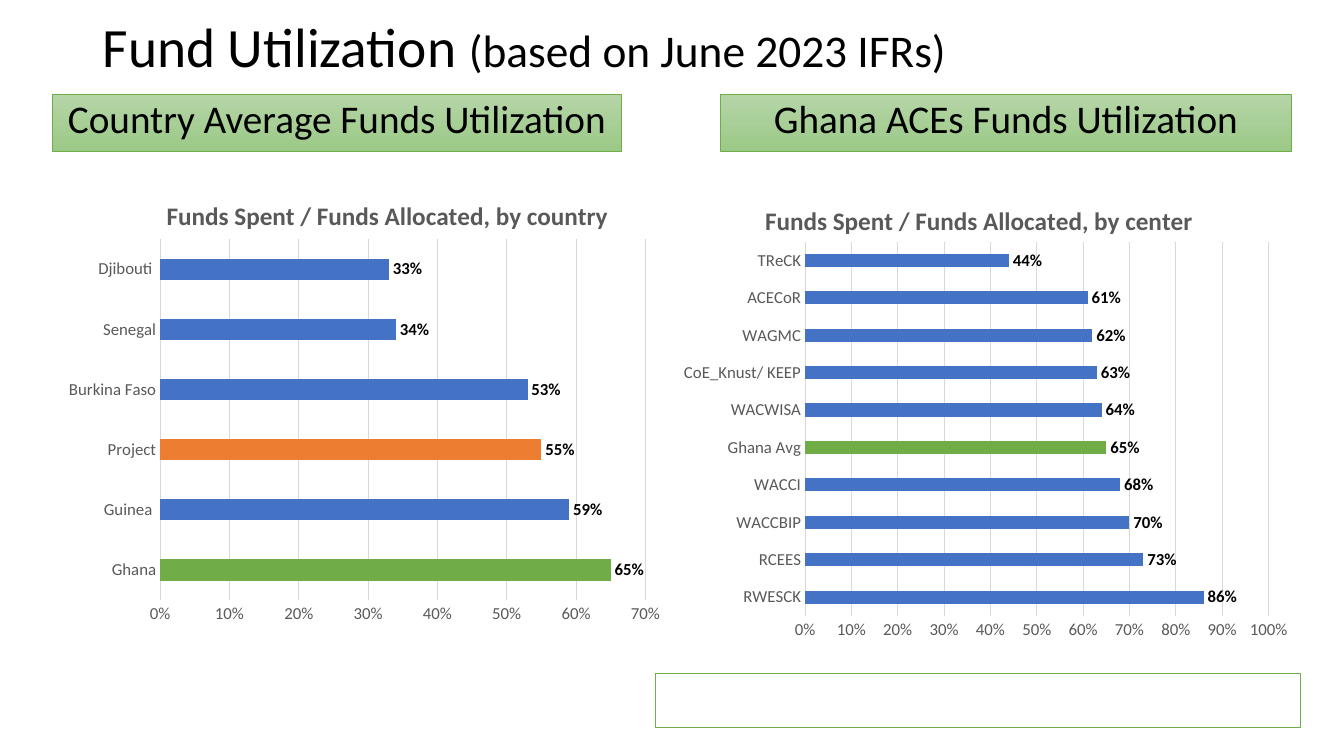
import pptx
import pptx.chart.data
import pptx.dml.color
import pptx.enum.chart
import pptx.enum.shapes
import pptx.enum.text
import pptx.oxml
import pptx.oxml.ns
import pptx.util

Inches = pptx.util.Inches
Pt = pptx.util.Pt
FONT = "Calibri"
COLORS = {
    "black": "000000", "white": "FFFFFF", "axis": "595959", "grid": "D9D9D9",
    "blue": "4472C4", "orange": "ED7D31", "green": "70AD47",
    "pale": "B5D5A7", "sage": "9CC987",
}
COUNTRIES = [("Ghana", 0.65), ("Guinea ", 0.59), ("Project", 0.55),
             ("Burkina Faso", 0.53), ("Senegal", 0.34), ("Djibouti ", 0.33)]
CENTERS = [("RWESCK", 0.86), ("RCEES", 0.73), ("WACCBIP", 0.7), ("WACCI", 0.68),
           ("Ghana Avg", 0.65), ("WACWISA", 0.64), ("CoE_Knust/ KEEP", 0.63),
           ("WAGMC", 0.62), ("ACECoR", 0.61), ("TReCK", 0.44)]


def color(name):
    """Return the named colour."""
    return pptx.dml.color.RGBColor.from_string(COLORS[name])


def style_font(font, size, name="black", bold=False):
    """Set typeface, size, colour and weight."""
    font.name, font.size, font.bold = FONT, Pt(size), bold
    font.color.rgb = color(name)


def add_title(page, box):
    """Place the slide title with its smaller qualifier."""
    frame = page.shapes.add_textbox(*map(Inches, box)).text_frame
    frame.word_wrap = True
    frame.vertical_anchor = pptx.enum.text.MSO_ANCHOR.MIDDLE
    para = frame.paragraphs[0]
    para.line_spacing = 0.9
    for text, size in (("Fund Utilization ", 39.6), ("(based on June 2023 IFRs)", 32.4)):
        span = para.add_run()
        span.text = text
        style_font(span.font, size)


def add_panel(page, box, line_width):
    """Place a white rectangle with a green outline."""
    panel = page.shapes.add_shape(pptx.enum.shapes.MSO_SHAPE.RECTANGLE, *map(Inches, box))
    panel.shadow.inherit = False
    panel.fill.solid()
    panel.fill.fore_color.rgb = color("white")
    panel.line.color.rgb = color("green")
    panel.line.width = Pt(line_width)
    return panel


def add_heading(page, box, text):
    """Place a section heading on a green gradient."""
    panel = add_panel(page, box, 0.5)
    panel.fill.gradient()
    panel.fill.gradient_angle = 270
    for stop, name in zip(panel.fill.gradient_stops, ("pale", "sage")):
        stop.color.rgb = color(name)
    frame = panel.text_frame
    frame.text = text
    frame.word_wrap = True
    frame.vertical_anchor = pptx.enum.text.MSO_ANCHOR.TOP
    para = frame.paragraphs[0]
    para.alignment = pptx.enum.text.PP_ALIGN.CENTER
    para.line_spacing = 0.9
    para.space_before = Pt(10)
    style_font(para.runs[0].font, 28)


def set_layout(parent, position, fractions, inner=False):
    """Fix a chart part at fractions of the chart box."""
    for old in parent.xpath("./c:layout"):
        parent.remove(old)
    target = '<c:layoutTarget val="inner"/>' if inner else ""
    modes = "".join(f'<c:{axis}Mode val="edge"/>' for axis in "xy")
    values = "".join(f'<c:{key} val="{value}"/>' for key, value in zip("xywh", fractions))
    parent.insert(position, pptx.oxml.parse_xml(
        f'<c:layout {pptx.oxml.ns.nsdecls("c")}><c:manualLayout>'
        f"{target}{modes}{values}</c:manualLayout></c:layout>"))


def style_axis(axis):
    """Remove tick marks and set grey labels."""
    axis.major_tick_mark = axis.minor_tick_mark = pptx.enum.chart.XL_TICK_MARK.NONE
    style_font(axis.tick_labels.font, 12, "axis")


def add_bars(page, box, title, rows, maximum, highlights, title_at, plot_at):
    """Place a bar chart of utilization rates with highlighted rows."""
    data = pptx.chart.data.CategoryChartData(number_format="0%")
    data.categories = [label for label, _ in rows]
    data.add_series("Series 1", [rate for _, rate in rows])
    chart = page.shapes.add_chart(
        pptx.enum.chart.XL_CHART_TYPE.BAR_CLUSTERED, *map(Inches, box), data).chart
    style_font(chart.font, 10)
    chart.has_legend = False
    chart.has_title = True
    chart.chart_title.text_frame.text = title
    style_font(chart.chart_title.text_frame.paragraphs[0].runs[0].font, 18, "axis", True)
    chart.chart_title.include_in_layout = False
    set_layout(chart.element.xpath("./c:chart/c:title")[0], 1, title_at)
    set_layout(chart.element.xpath("./c:chart/c:plotArea")[0], 0, plot_at, True)

    style_axis(chart.category_axis)
    chart.category_axis.format.line.color.rgb = color("grid")
    chart.category_axis.format.line.width = Pt(0.75)
    rates = chart.value_axis
    style_axis(rates)
    rates.minimum_scale, rates.maximum_scale, rates.major_unit = 0, maximum, 0.1
    rates.tick_labels.number_format = "0%"
    rates.tick_labels.number_format_is_linked = False
    rates.format.line.fill.background()
    rates.major_gridlines.format.line.color.rgb = color("grid")
    rates.major_gridlines.format.line.width = Pt(0.75)

    plot = chart.plots[0]
    plot.gap_width = 182
    plot.vary_by_categories = False
    series = plot.series[0]
    series.format.fill.solid()
    series.format.fill.fore_color.rgb = color("blue")
    for index, (label, _) in enumerate(rows):
        if label in highlights:
            fill = series.points[index].format.fill
            fill.solid()
            fill.fore_color.rgb = color(highlights[label])
    labels = series.data_labels
    labels.show_value = True
    labels.position = pptx.enum.chart.XL_LABEL_POSITION.OUTSIDE_END
    labels.number_format = "0%"
    labels.number_format_is_linked = False
    style_font(labels.font, 12, bold=True)


def main():
    """Build the fund utilization slide."""
    deck = pptx.Presentation()
    deck.slide_width, deck.slide_height = Inches(13.33), Inches(7.5)
    page = deck.slides.add_slide(deck.slide_layouts[6])
    add_title(page, (0.92, 0.15, 11.5, 0.68))
    add_bars(page, (0.57, 1.74, 6.1, 4.55), "Funds Spent / Funds Allocated, by country",
             COUNTRIES, 0.7, {"Ghana": "green", "Project": "orange"},
             (0.17, 0.04), (0.167, 0.139, 0.789, 0.787))
    add_bars(page, (6.67, 1.74, 6.23, 4.7), "Funds Spent / Funds Allocated, by center",
             CENTERS, 1, {"Ghana Avg": "green"},
             (0.14, 0.05), (0.211, 0.14, 0.738, 0.79))
    add_heading(page, (0.52, 0.94, 5.64, 0.56), "Country Average Funds Utilization")
    add_heading(page, (7.14, 0.94, 5.67, 0.56), "Ghana ACEs Funds Utilization")
    add_panel(page, (6.5, 6.68, 6.4, 0.54), 1)
    deck.save("out.pptx")


if __name__ == "__main__":
    main()
